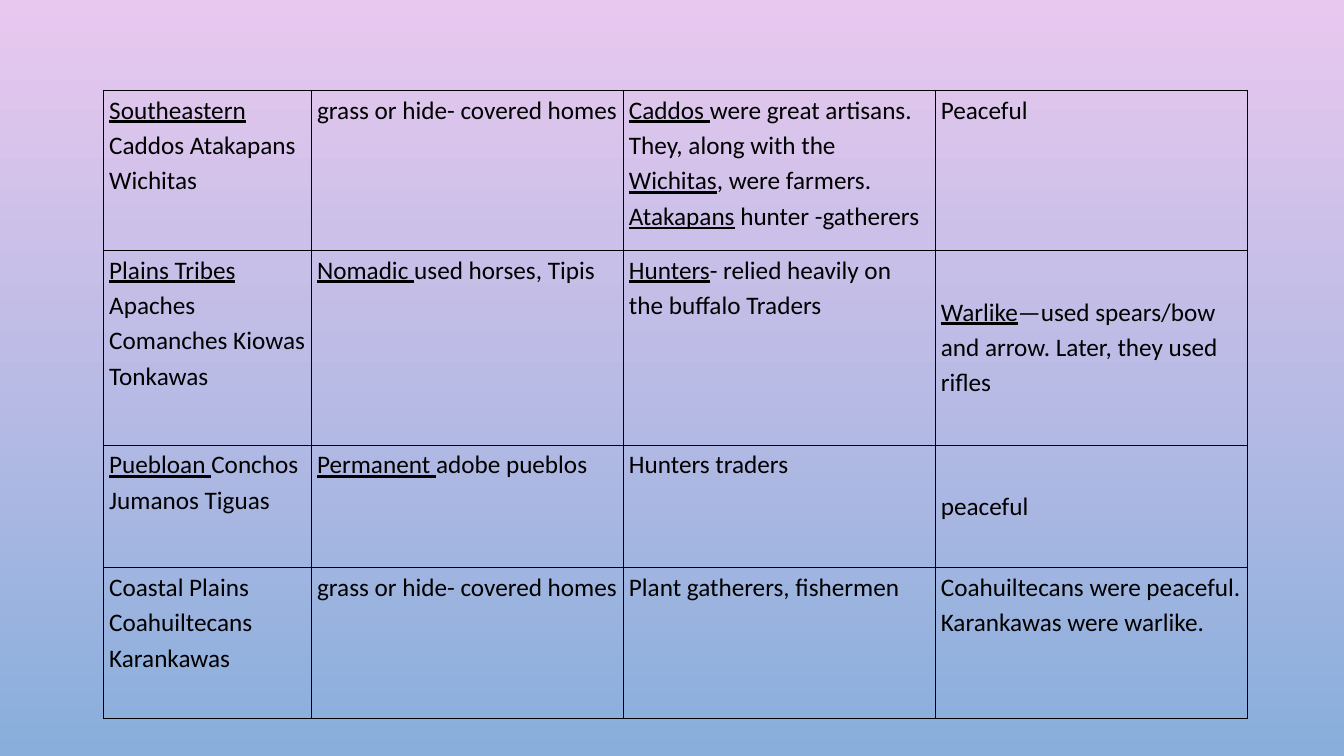
from lxml.etree import SubElement
from pptx import Presentation
from pptx.dml.color import RGBColor
from pptx.oxml.ns import qn
from pptx.util import Pt

COLORS = {"sky_top": "E9C8EF", "sky_bottom": "89AEDB", "ink": "000000"}
FONT = "Calibri"
COLUMN_WIDTHS = [148.5, 222.8, 222.8, 222.8]
ROW_HEIGHTS = [114.3, 139.2, 87.5, 107.9]
LOWERED_CELLS = {(1, 3), (2, 3)}

# Underscores enclose underlined words.
TRIBES = [
    ["_Southeastern _Caddos Atakapans Wichitas",
     "grass or hide- covered homes",
     "_Caddos _were great artisans. They, along with the _Wichitas_, "
     "were farmers. _Atakapans_ hunter -gatherers",
     "Peaceful"],
    ["_Plains Tribes _Apaches Comanches Kiowas Tonkawas",
     "_Nomadic _used horses, Tipis",
     "_Hunters_- relied heavily on the buffalo Traders",
     "_Warlike_—used spears/bow and arrow. Later, they used rifles"],
    ["_Puebloan _Conchos Jumanos Tiguas",
     "_Permanent _adobe pueblos",
     "Hunters traders",
     "peaceful"],
    ["Coastal Plains_ _Coahuiltecans Karankawas",
     "grass or hide- covered homes",
     "Plant gatherers, fishermen",
     "Coahuiltecans were peaceful. Karankawas were warlike."],
]


def paint_background(page):
    fill = page.background.fill
    fill.gradient()
    fill.gradient_angle = 270
    for stop, name in zip(fill.gradient_stops, ("sky_top", "sky_bottom")):
        stop.color.rgb = RGBColor.from_string(COLORS[name])


def add_borders(cell):
    properties = cell._tc.get_or_add_tcPr()
    for side in ("lnL", "lnR", "lnT", "lnB"):
        line = SubElement(properties, qn(f"a:{side}"), w=str(Pt(1)))
        fill = SubElement(line, qn("a:solidFill"))
        SubElement(fill, qn("a:srgbClr"), val=COLORS["ink"])


def write_cell(cell, marked_text, top_margin):
    add_borders(cell)
    cell.fill.background()
    cell.margin_left = cell.margin_right = Pt(4)
    cell.margin_top, cell.margin_bottom = Pt(top_margin), Pt(0)
    para = cell.text_frame.paragraphs[0]
    para.line_spacing = 1.15
    para.space_after = Pt(5)
    for index, words in enumerate(marked_text.split("_")):
        if words:
            span = para.add_run()
            span.text = words
            span.font.name = FONT
            span.font.size = Pt(18)
            span.font.underline = index % 2 == 1
            span.font.color.rgb = RGBColor.from_string(COLORS["ink"])


def add_tribe_table(page, left, top):
    frame = page.shapes.add_table(
        len(ROW_HEIGHTS), len(COLUMN_WIDTHS), Pt(left), Pt(top),
        Pt(sum(COLUMN_WIDTHS)), Pt(sum(ROW_HEIGHTS)))
    table = frame.table
    table.first_row = table.horz_banding = False
    for column, width in zip(table.columns, COLUMN_WIDTHS):
        column.width = Pt(width)
    for row, height in zip(table.rows, ROW_HEIGHTS):
        row.height = Pt(height)
    for row_index, texts in enumerate(TRIBES):
        for column_index, text in enumerate(texts):
            lowered = (row_index, column_index) in LOWERED_CELLS
            write_cell(table.cell(row_index, column_index), text,
                       30 if lowered else 0)


def main():
    deck = Presentation()
    deck.slide_width, deck.slide_height = Pt(960), Pt(540)
    page = deck.slides.add_slide(deck.slide_layouts[6])
    paint_background(page)
    add_tribe_table(page, 74, 64.6)
    deck.save("out.pptx")


if __name__ == "__main__":
    main()
